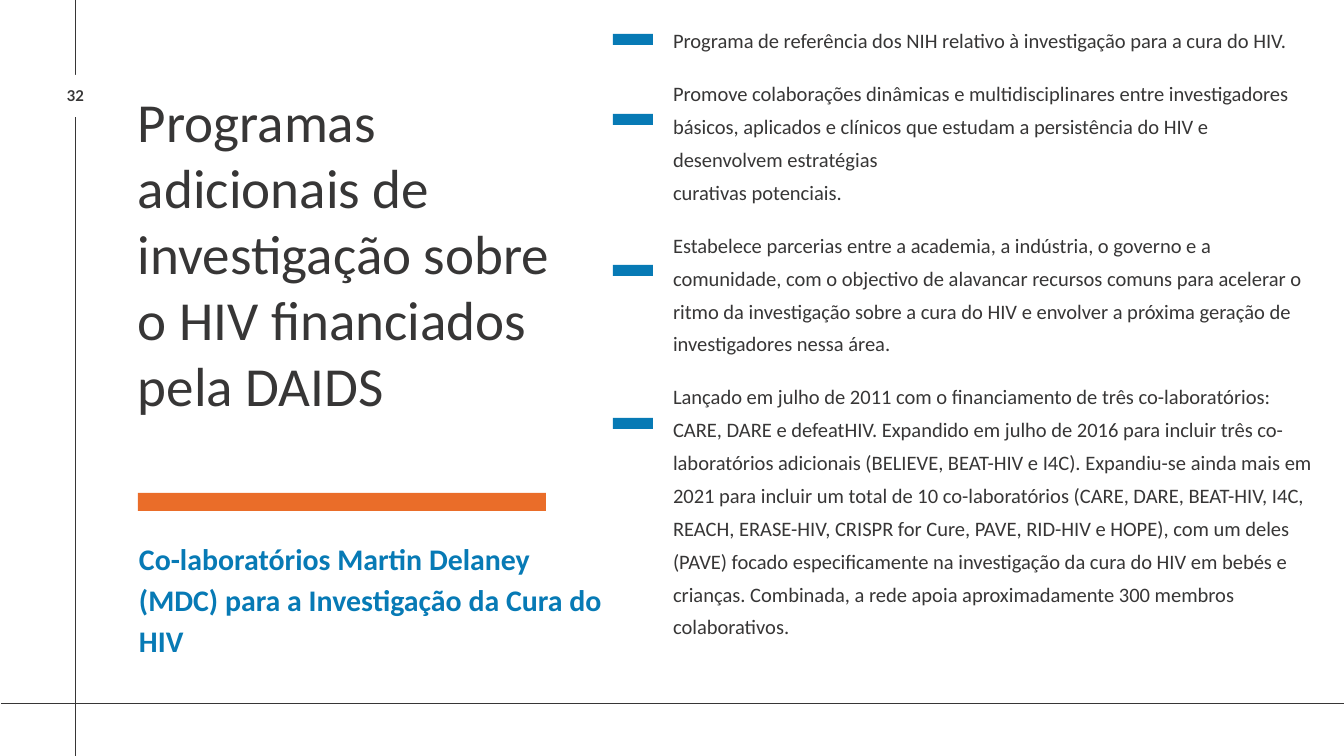
import dataclasses

import lxml.etree
import pptx
import pptx.dml.color
import pptx.enum.shapes
import pptx.enum.text
import pptx.oxml.ns
import pptx.util

PX = 914400 / 67.2


@dataclasses.dataclass(frozen=True)
class Theme:
    ink: str = "373636"
    blue: str = "077AB5"
    orange: str = "EA6D29"
    white: str = "FFFFFF"
    font: str = "Calibri"
    number_font: str = "Lato"
    title_size: int = 59
    subtitle_size: int = 32
    body_size: int = 22
    number_size: int = 16


def px(*lengths):
    return [pptx.util.Emu(round(length * PX)) for length in lengths]


def rgb(colour):
    return pptx.dml.color.RGBColor.from_string(colour)


def write(shape, paragraphs, *, size, colour, font, line_spacing, bold=False,
          align=pptx.enum.text.PP_ALIGN.LEFT, gaps=()):
    """Fill a shape with paragraphs; gaps maps a paragraph index to its space before."""
    frame = shape.text_frame
    frame.word_wrap = True
    frame.auto_size = pptx.enum.text.MSO_AUTO_SIZE.NONE
    frame.vertical_anchor = pptx.enum.text.MSO_ANCHOR.TOP
    frame.margin_left = frame.margin_right = frame.margin_top = frame.margin_bottom = 0
    gaps = dict(gaps)
    for index, text in enumerate(paragraphs):
        paragraph = frame.paragraphs[0] if index == 0 else frame.add_paragraph()
        properties = paragraph._p.get_or_add_pPr()
        properties.set("marL", "0")
        properties.set("indent", "0")
        lxml.etree.SubElement(properties, pptx.oxml.ns.qn("a:buNone"))
        paragraph.alignment = align
        paragraph.line_spacing = pptx.util.Pt(line_spacing)
        paragraph.space_before = pptx.util.Pt(gaps.get(index, 0))
        run = paragraph.add_run()
        run.text = text
        run.font.name = font
        run.font.size = pptx.util.Pt(size)
        run.font.bold = bold
        run.font.color.rgb = rgb(colour)


class SlideBuilder:
    """Holds the theme and the slide being drawn."""

    def __init__(self, slide, theme):
        self.slide = slide
        self.theme = theme

    def bar(self, left, top, width, height, colour):
        shape = self.slide.shapes.add_shape(
            pptx.enum.shapes.MSO_SHAPE.RECTANGLE, *px(left, top, width, height))
        shape.shadow.inherit = False
        shape.fill.solid()
        shape.fill.fore_color.rgb = rgb(colour)
        shape.line.fill.background()

    def line(self, start_x, start_y, end_x, end_y):
        connector = self.slide.shapes.add_connector(
            pptx.enum.shapes.MSO_CONNECTOR.STRAIGHT, *px(start_x, start_y, end_x, end_y))
        connector.line.color.rgb = rgb(self.theme.ink)
        connector.line.width = pptx.util.Pt(0.75)
        lxml.etree.SubElement(connector._element.spPr, pptx.oxml.ns.qn("a:effectLst"))

    def text(self, left, top, width, height, paragraphs, **text_format):
        box = self.slide.shapes.add_textbox(*px(left, top, width, height))
        write(box, paragraphs, **text_format)

    def placeholder(self, index, left, top, width, height, paragraphs, **text_format):
        shape = self.slide.placeholders[index]
        shape.left, shape.top, shape.width, shape.height = px(left, top, width, height)
        write(shape, paragraphs, **text_format)


TITLE = [
    "Programas adicionais de investigação sobre o HIV financiados",
    "pela DAIDS",
]
SUBTITLE = "Co-laboratórios Martin Delaney (MDC) para a Investigação da Cura do HIV"
# Each point: top of its marker, then its paragraphs
POINTS = [
    (34, ["Programa de referência dos NIH relativo à investigação para a cura do HIV."]),
    (114, ["Promove colaborações dinâmicas e multidisciplinares entre investigadores "
           "básicos, aplicados e clínicos que estudam a persistência do HIV e "
           "desenvolvem estratégias",
           "curativas potenciais."]),
    (265, ["Estabelece parcerias entre a academia, a indústria, o governo e a comunidade, "
           "com o objectivo de alavancar recursos comuns para acelerar o ritmo da "
           "investigação sobre a cura do HIV e envolver a próxima geração de "
           "investigadores nessa área."]),
    (418, ["Lançado em julho de 2011 com o financiamento de três co-laboratórios: CARE, "
           "DARE e defeatHIV. Expandido em julho de 2016 para incluir três "
           "co-laboratórios adicionais (BELIEVE, BEAT-HIV e I4C). Expandiu-se ainda mais "
           "em 2021 para incluir um total de 10 co-laboratórios (CARE, DARE, BEAT-HIV, "
           "I4C, REACH, ERASE-HIV, CRISPR for Cure, PAVE, RID-HIV e HOPE), com um deles "
           "(PAVE) focado especificamente na investigação da cura do HIV em bebés e "
           "crianças. Combinada, a rede apoia aproximadamente 300 membros "
           "colaborativos."]),
]
POINT_GAP = 21.6


def main():
    presentation = pptx.Presentation()
    presentation.slide_width, presentation.slide_height = px(1344, 756)
    slide = presentation.slides.add_slide(presentation.slide_layouts[1])
    theme = Theme()
    builder = SlideBuilder(slide, theme)

    builder.line(75, 0, 75, 756)
    builder.bar(46, 75, 58, 42, theme.white)
    builder.text(51, 88, 49, 17, ["32"], size=theme.number_size, colour=theme.ink,
                 font=theme.number_font, line_spacing=17.6, bold=True,
                 align=pptx.enum.text.PP_ALIGN.CENTER)

    builder.placeholder(0, 138, 87, 442, 398, TITLE, size=theme.title_size,
                        colour=theme.ink, font=theme.font, line_spacing=70.8)

    paragraphs, gaps = [], {}
    for marker_top, point in POINTS:
        if paragraphs:
            gaps[len(paragraphs)] = POINT_GAP
        paragraphs.extend(point)
        builder.bar(613, marker_top, 40, 11, theme.blue)
    builder.placeholder(1, 673, 20, 643, 724, paragraphs, size=theme.body_size,
                        colour=theme.ink, font=theme.font, line_spacing=35.2, gaps=gaps)

    builder.line(1, 703, 1344, 703)
    builder.bar(138, 493, 408, 18, theme.orange)
    builder.text(139, 535, 474, 123, [SUBTITLE], size=theme.subtitle_size,
                 colour=theme.blue, font=theme.font, line_spacing=44, bold=True)

    presentation.save("out.pptx")


if __name__ == "__main__":
    main()
